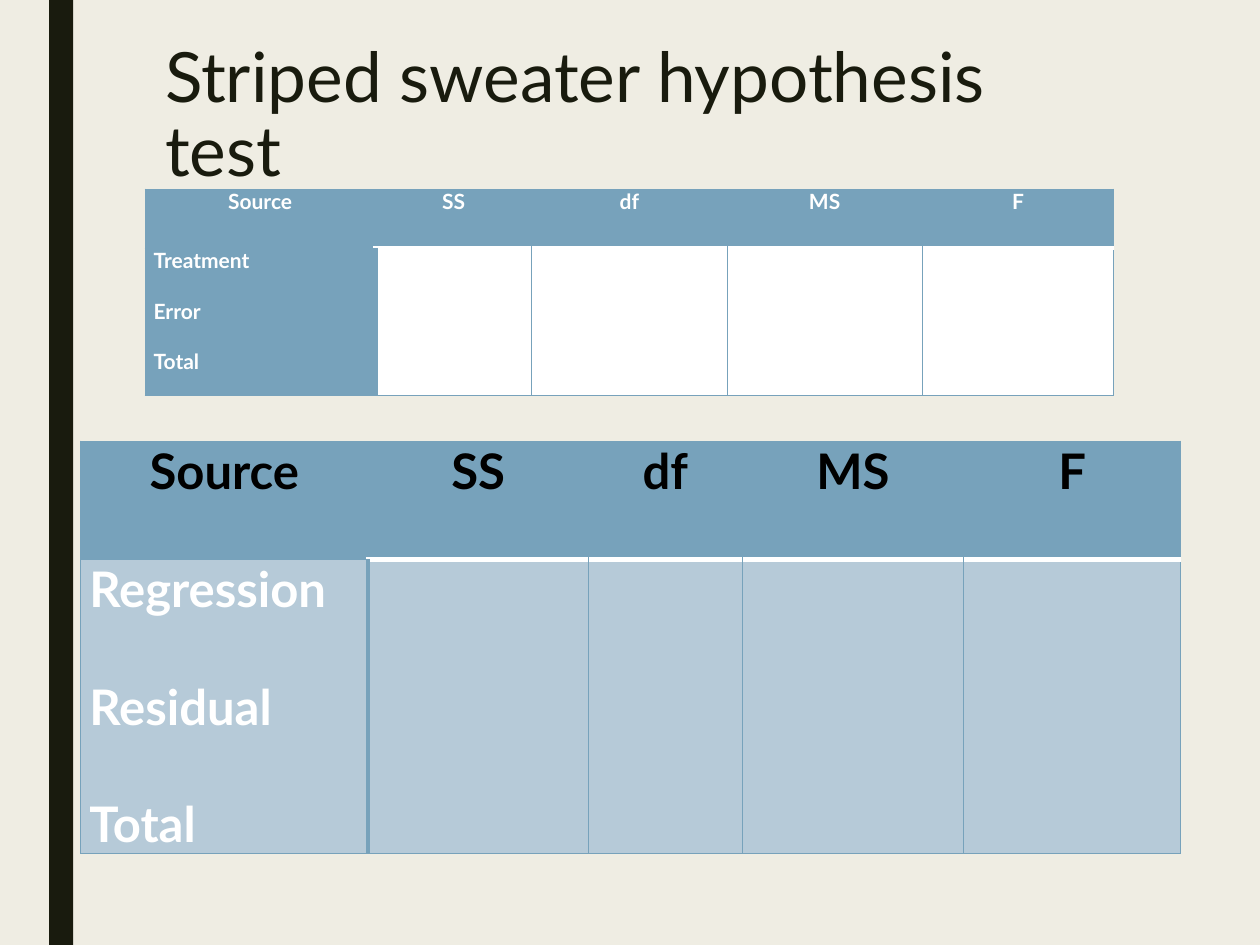
from dataclasses import dataclass

from lxml import etree
from pptx import Presentation
from pptx.dml.color import RGBColor
from pptx.enum.shapes import MSO_SHAPE
from pptx.enum.text import MSO_ANCHOR, MSO_AUTO_SIZE, PP_ALIGN
from pptx.oxml.ns import qn
from pptx.util import Inches, Pt

RECT = MSO_SHAPE.RECTANGLE
TOP = MSO_ANCHOR.TOP
FIXED = MSO_AUTO_SIZE.NONE
LEFT, CENTER = PP_ALIGN.LEFT, PP_ALIGN.CENTER
PLAIN = "{2D5ABB26-0587-4C30-8999-92F81FD0307C}"  # no style, no grid


@dataclass(frozen=True)
class Theme:
    font: str = "Lato"
    back: str = "EFEDE3"
    dark: str = "191B0E"
    blue: str = "77A2BB"
    pale: str = "B6CAD8"
    white: str = "FFFFFF"
    black: str = "000000"
    title: float = 39.6
    small: float = 12
    large: float = 28
    thin: float = 0.5
    thick: float = 2.75


def apply(item, values):
    for name, value in values.items():
        setattr(item, name, value)


def paint(fill, color):
    fill.solid()
    fill.fore_color.rgb = RGBColor.from_string(color)


def edge(cell, lines):
    """Draw cell borders; lines maps a side (L, R, T, B) to color and points."""
    props = cell._tc.get_or_add_tcPr()
    sides = [side for side in "LRTB" if side in lines]
    for spot, side in enumerate(sides):
        color, width = lines[side]
        line = etree.Element(qn(f"a:ln{side}"), w=str(Pt(width)))
        fill = etree.SubElement(line, qn("a:solidFill"))
        etree.SubElement(fill, qn("a:srgbClr"), val=color)
        props.insert(spot, line)


class Deck:
    """Holds the theme and the current slide."""

    def __init__(self, theme):
        self.theme = theme
        self.file = Presentation()
        apply(self.file, {"slide_width": Inches(10), "slide_height": Inches(7.5)})
        self.slide = self.file.slides.add_slide(self.file.slide_layouts[5])
        paint(self.slide.background.fill, theme.back)

    def style(self, font, size, color, bold=False):
        apply(font, {"name": self.theme.font, "size": Pt(size), "bold": bold})
        font.color.rgb = RGBColor.from_string(color)

    def bar(self, *box):
        shape = self.slide.shapes.add_shape(RECT, *map(Inches, box))
        shape.shadow.inherit = False
        paint(shape.fill, self.theme.dark)
        shape.line.fill.background()

    def title(self, text, *box):
        shape = self.slide.shapes.title
        names = ("left", "top", "width", "height")
        apply(shape, dict(zip(names, map(Inches, box))))
        frame = shape.text_frame
        frame.text = text
        apply(frame, {"word_wrap": True, "auto_size": FIXED, "vertical_anchor": TOP})
        para = frame.paragraphs[0]
        apply(para, {"alignment": LEFT, "line_spacing": 0.89})
        self.style(para.runs[0].font, self.theme.title, self.theme.dark)

    def label(self, cell, lines, size, color, align):
        """Fill a cell with paragraphs that stand one line height apart."""
        apply(cell, {"margin_left": Inches(0.07), "margin_right": Inches(0.07),
                     "margin_top": 0, "margin_bottom": 0})
        frame = cell.text_frame
        frame.text = "\n".join(lines)
        for order, para in enumerate(frame.paragraphs):
            gap = Pt(1.2 * size) if order else 0
            apply(para, {"alignment": align, "space_before": gap})
            self.style(para.runs[0].font, size, color, True)

    def table(self, box, cols, rows, heads, terms, size, ink, side, body):
        """Draw a table with a head row and one tall row of stacked terms."""
        look = self.theme
        frame = self.slide.shapes.add_table(2, len(cols), *map(Inches, box))
        grid = frame.table
        apply(grid, {"first_row": False, "horz_banding": False})
        grid._tbl.tblPr.find(qn("a:tableStyleId")).text = PLAIN
        for col, width in zip(grid.columns, cols):
            col.width = Inches(width)
        for row, height in zip(grid.rows, rows):
            row.height = Inches(height)

        thin = (look.blue, look.thin)
        rule = (look.white, look.thick)
        bold = (look.blue, look.thick)
        last = len(cols) - 1
        for spot, text in enumerate(heads):
            head, cell = grid.cell(0, spot), grid.cell(1, spot)
            self.label(head, [text], size, ink, CENTER)
            paint(head.fill, look.blue)
            paint(cell.fill, body if spot else side)
            split = rule if spot else thin
            tops = {"T": thin, "B": split}
            if spot == 0:
                tops["L"] = thin
            if spot == last:
                tops["R"] = thin
            edge(head, tops)
            edge(cell, {"L": bold if spot == 1 else thin,
                        "R": thin if spot else bold,
                        "T": split, "B": thin})
        self.label(grid.cell(1, 0), terms, size, look.white, LEFT)


def main():
    look = Theme()
    deck = Deck(look)
    heads = ["Source", "SS", "df", "MS", "F"]
    deck.bar(0.39, 0, 0.19, 7.5)
    deck.title("Striped sweater hypothesis test", 1.21, 0.29, 7.58, 0.62)
    deck.table((1.15, 1.5, 7.69, 1.64), (1.83, 1.24, 1.55, 1.55, 1.52),
               (0.47, 1.17), heads, ["Treatment", "Error", "Total"],
               look.small, look.white, look.blue, look.white)
    deck.table((0.64, 3.5, 8.73, 3.27), (2.28, 1.75, 1.22, 1.76, 1.72),
               (0.94, 2.33), heads, ["Regression", "Residual", "Total"],
               look.large, look.black, look.pale, look.pale)
    deck.file.save("out.pptx")


if __name__ == "__main__":
    main()
